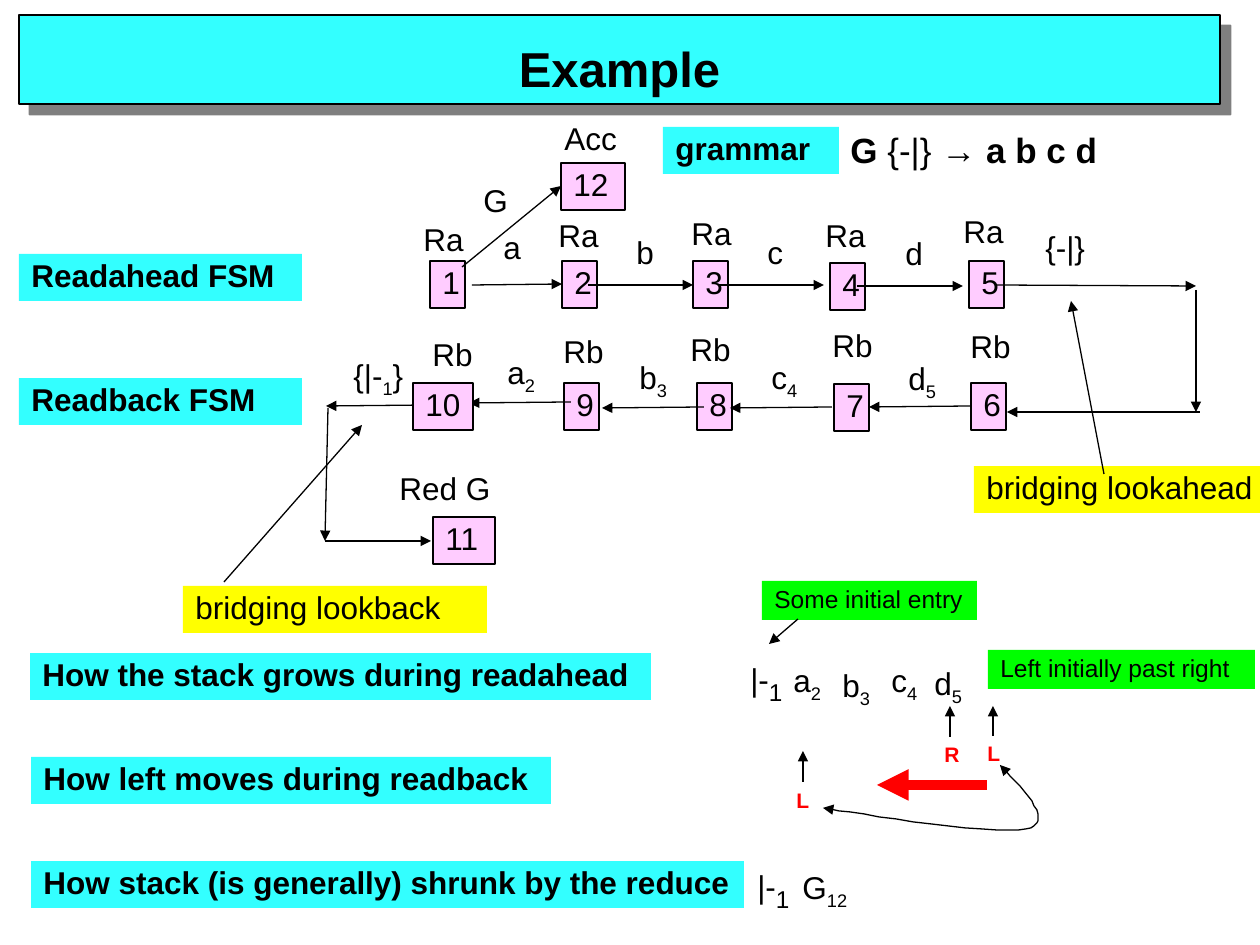
from lxml import etree
from pptx import Presentation
from pptx.dml.color import RGBColor
from pptx.enum.shapes import MSO_CONNECTOR, MSO_SHAPE
from pptx.enum.text import MSO_ANCHOR, MSO_AUTO_SIZE, PP_ALIGN
from pptx.oxml import parse_xml
from pptx.oxml.ns import nsdecls, qn
from pptx.util import Emu, Inches, Pt

SCALE = 914400 / 126
BLACK = RGBColor(0x00, 0x00, 0x00)
CYAN = RGBColor(0x33, 0xFF, 0xFF)
PINK = RGBColor(0xFF, 0xCC, 0xFF)
YELLOW = RGBColor(0xFF, 0xFF, 0x00)
GREEN = RGBColor(0x00, 0xFF, 0x00)
RED = RGBColor(0xFF, 0x00, 0x00)
LINE_HEIGHT = 47
NARROW = 58

# Text between underscores is subscript, text between asterisks is bold.
HEADINGS = [  # text, left, top, width
    ("grammar", 663, 127, 176),
    ("Readahead FSM", 19, 254, 283),
    ("Readback FSM", 19, 378, 283),
    ("How the stack grows during readahead", 30, 653, 621),
    ("How left moves during readback", 31, 757, 520),
    ("How stack (is generally) shrunk by the reduce", 31, 861, 713),
]
STATES = [
    ("1", 430, 261, 35), ("2", 562, 261, 35), ("3", 693, 261, 35),
    ("4", 830, 263, 35), ("5", 969, 261, 35), ("6", 971, 383, 35),
    ("7", 834, 384, 35), ("8", 697, 383, 35), ("9", 564, 383, 35),
    ("11", 433, 517, 62), ("12", 561, 163, 64),
]
READBACK_END = [("10", 413, 383, 60)]
BRIDGES = [("bridging lookahead", 974, 466, 304), ("bridging lookback", 183, 586, 304)]
NOTES = [("Some initial entry", 762, 581, 215), ("Left initially past right", 988, 650, 267)]
READ_LABELS = {
    "Ra": [(411, 218), (546, 214), (679, 212), (813, 214), (951, 210)],
    "Rb": [(420, 333), (551, 330), (678, 328), (820, 324), (958, 325)],
}
LABELS = [
    ("Acc", 552, 117, 87), ("G", 471, 179, 58), ("a", 491, 226, 58),
    ("b", 624, 231, 43), ("c", 755, 231, 42), ("d", 893, 232, 43),
    ("{-|}", 1033, 226, 202), ("{|-_1_}", 341, 350, 96), ("a_2_", 495, 347, 58),
    ("b_3_", 627, 352, 55), ("c_4_", 759, 352, 53), ("d_5_", 896, 353, 55),
    ("Red G", 387, 467, 134),
    ("a_2_", 781, 655, 58), ("b_3_", 830, 660, 55), ("c_4_", 879, 655, 53),
    ("d_5_", 922, 658, 55), ("G_12_", 790, 862, 106),
]
STACK_BOTTOMS = [("|-_1_", 738, 644, 60), ("|-_1_", 745, 851, 60)]
POINTERS = [("R", 932, 738, 42), ("L", 975, 737, 39), ("L", 784, 784, 39)]
ARROWS = [  # start x, start y, end x, end y
    (462, 267, 561, 186), (472, 285, 562, 284), (588, 285, 693, 285),
    (719, 285, 824, 285), (857, 286, 963, 286), (995, 285, 1196, 286),
    (1196, 290, 1196, 412), (1200, 412, 1007, 412), (971, 406, 869, 407),
    (832, 407, 730, 408), (704, 407, 602, 408), (571, 402, 469, 403),
    (428, 405, 326, 406), (328, 408, 325, 541), (325, 541, 431, 541),
    (1104, 474, 1071, 301), (224, 582, 362, 425), (798, 619, 769, 644),
    (950, 737, 950, 706), (993, 736, 993, 706), (803, 782, 803, 751),
]
LEFT_SWEEP = (987, 785, 877, 785)
LEFT_PATH = [  # two Bezier curves that share their middle point
    [(1000, 765), (1028, 794), (1055, 823), (1026, 829)],
    [(1026, 829), (995, 837), (823, 808), (823, 808)],
]


def px(length):
    return Emu(round(length * SCALE))


def place(shape, *box):
    for name, length in zip(("left", "top", "width", "height"), box):
        setattr(shape, name, px(length))


def format_font(font, **values):
    font.color.rgb = values.pop("color", BLACK)
    for name, value in {"name": "Arial", **values}.items():
        setattr(font, name, value)


def write_text(frame, text, size, bold=False, color=BLACK, sub_size=None):
    """Fill the frame, reading _subscript_ and *bold* marks."""
    paragraph = frame.paragraphs[0]
    paragraph.line_spacing = 0.9
    paragraph.alignment = PP_ALIGN.LEFT
    for i, section in enumerate(text.split("*")):
        for j, part in enumerate(section.split("_")):
            if not part:
                continue
            run = paragraph.add_run()
            run.text = part
            is_sub = j % 2 == 1
            format_font(run.font, size=Pt(sub_size if is_sub and sub_size else size),
                        bold=bold or i % 2 == 1, color=color)
            if is_sub:
                run.font._element.set("baseline", "-25000")


def add_boxes(slide, items, height=LINE_HEIGHT, fill=None, outlined=False, size=18, **text_format):
    for text, left, top, width in items:
        box = [px(length) for length in (left, top, width, height)]
        if fill is None:
            shape = slide.shapes.add_textbox(*box)
        else:
            shape = slide.shapes.add_shape(MSO_SHAPE.RECTANGLE, *box)
            shape.shadow.inherit = False
            shape.fill.solid()
            shape.fill.fore_color.rgb = fill
            if outlined:
                shape.line.color.rgb = BLACK
                shape.line.width = Pt(0.75)
            else:
                shape.line.fill.background()
        frame = shape.text_frame
        frame.word_wrap = fill is not None or width >= NARROW
        frame.auto_size = MSO_AUTO_SIZE.NONE
        frame.vertical_anchor = MSO_ANCHOR.TOP
        write_text(frame, text, size, **text_format)


def style_line(shape, color, width, ends=("tailEnd",)):
    shape.line.color.rgb = color
    shape.line.width = Pt(width)
    for end in ends:
        etree.SubElement(shape.line._get_or_add_ln(), qn(f"a:{end}"), type="triangle")


def add_arrow(slide, start_x, start_y, end_x, end_y, color=BLACK, width=0.75):
    arrow = slide.shapes.add_connector(
        MSO_CONNECTOR.STRAIGHT, px(start_x), px(start_y), px(end_x), px(end_y))
    style_line(arrow, color, width)
    etree.SubElement(arrow._element.spPr, qn("a:effectLst"))


def bezier_points(controls, steps=16):
    for step in range(1, steps + 1):
        t = step / steps
        weights = ((1 - t) ** 3, 3 * t * (1 - t) ** 2, 3 * t * t * (1 - t), t ** 3)
        yield tuple(sum(w * point[axis] for w, point in zip(weights, controls)) for axis in (0, 1))


def add_left_path(slide):
    builder = slide.shapes.build_freeform(*LEFT_PATH[0][0], scale=SCALE)
    points = [point for controls in LEFT_PATH for point in bezier_points(controls)]
    builder.add_line_segments(points, close=False)
    curve = builder.convert_to_shape()
    curve.shadow.inherit = False
    curve.fill.background()
    style_line(curve, BLACK, 0.75, ("headEnd", "tailEnd"))


def add_title(slide):
    title = slide.shapes.title
    place(title, 19, 15, 1201, 89)
    title.fill.solid()
    title.fill.fore_color.rgb = CYAN
    title.line.color.rgb = BLACK
    title.line.width = Pt(1)
    title._element.spPr.append(parse_xml(
        f'<a:effectLst {nsdecls("a")}><a:outerShdw dist="107950" dir="2700000">'
        '<a:srgbClr val="000000"><a:alpha val="50000"/></a:srgbClr></a:outerShdw></a:effectLst>'))
    frame = title.text_frame
    frame.text = "Example"
    frame.auto_size = MSO_AUTO_SIZE.NONE
    frame.vertical_anchor = MSO_ANCHOR.MIDDLE
    paragraph = frame.paragraphs[0]
    paragraph.alignment = PP_ALIGN.CENTER
    paragraph.line_spacing = 1.3
    format_font(paragraph.runs[0].font, size=Pt(28), bold=True)


def main():
    presentation = Presentation()
    presentation.slide_width, presentation.slide_height = Inches(10), Inches(7.5)
    slide = presentation.slides.add_slide(presentation.slide_layouts[5])
    add_title(slide)
    add_boxes(slide, [("*G *{-|} *→ a b c d*", 838, 127, 494)], height=50, size=20)
    add_boxes(slide, HEADINGS, fill=CYAN, bold=True)
    add_boxes(slide, STATES, fill=PINK, outlined=True)
    add_boxes(slide, BRIDGES, fill=YELLOW)
    add_boxes(slide, NOTES, height=39, fill=GREEN, size=14)
    for text, corners in READ_LABELS.items():
        add_boxes(slide, [(text, left, top, 77) for left, top in corners])
    add_boxes(slide, LABELS)
    add_boxes(slide, STACK_BOTTOMS, height=58, sub_size=24)
    add_boxes(slide, POINTERS, height=35, size=12, bold=True, color=RED)
    for arrow in ARROWS:
        add_arrow(slide, *arrow)
    add_arrow(slide, *LEFT_SWEEP, color=RED, width=6)
    add_left_path(slide)
    add_boxes(slide, READBACK_END, fill=PINK, outlined=True)
    presentation.save("out.pptx")


if __name__ == "__main__":
    main()
